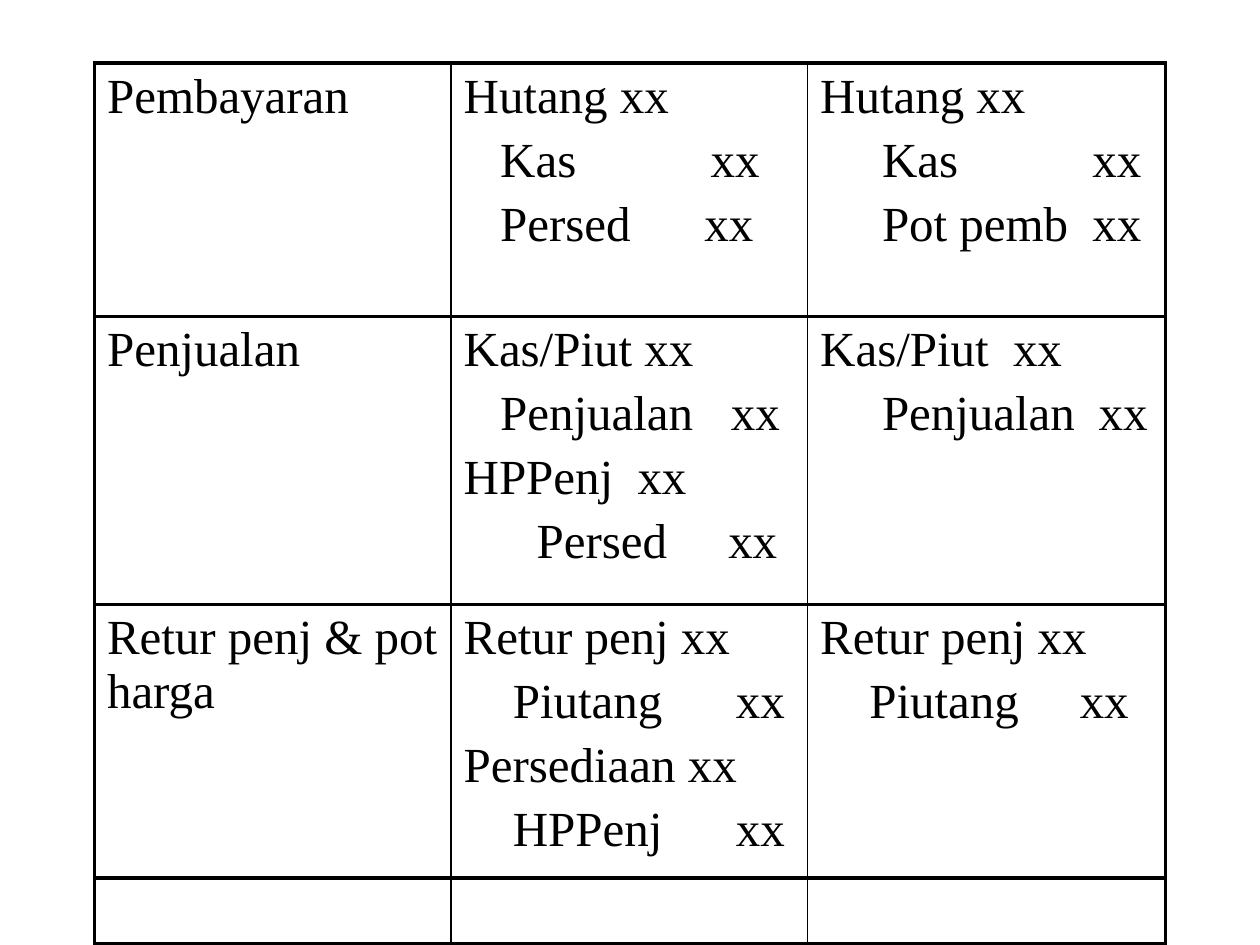
import pptx
import pptx.dml.color
import pptx.oxml
import pptx.oxml.ns
import pptx.util
from pptx.util import Inches

COLUMN_WIDTHS = [2.83, 2.83, 2.84]
ROW_HEIGHTS = [2.01, 2.29, 2.17, 0.52]
JOURNAL = [
    [
        [("Pembayaran",)],
        [("Hutang xx",), ("\tKas\txx", 0.29, 1.96), ("\tPersed\txx", 0.29, 1.91)],
        [("Hutang xx",), ("\tKas\txx", 0.49, 2.16), ("\tPot pemb\txx", 0.49, 2.16)],
    ],
    [
        [("Penjualan",)],
        [("Kas/Piut xx",), ("\tPenjualan\txx", 0.29, 2.12),
         ("HPPenj\txx", 1.38), ("\tPersed\txx", 0.58, 2.1)],
        [("Kas/Piut\txx", 1.53), ("\tPenjualan\txx", 0.49, 2.21)],
    ],
    [
        [("Retur penj & pot harga",)],
        [("Retur penj xx",), ("\tPiutang\txx", 0.39, 2.16),
         ("Persediaan xx",), ("\tHPPenj\txx", 0.39, 2.16)],
        [("Retur penj xx",), ("\tPiutang\txx", 0.39, 2.06)],
    ],
    [[], [], []],
]


def rgb(hex_string):
    return pptx.dml.color.RGBColor.from_string(hex_string)


class JournalSlide:
    """Holds the style and the current slide, and draws its elements."""

    font_name = "Times New Roman"
    font_size = 28
    ink = "000000"
    thick, thin = 2.25, 1

    def __init__(self, presentation):
        self.slide = presentation.slides.add_slide(presentation.slide_layouts[6])

    def add_entry(self, paragraph, text, *stops):
        paragraph.text = text
        paragraph.space_before = pptx.util.Pt(self.font_size * 0.2)
        paragraph.font.name = self.font_name
        paragraph.font.size = pptx.util.Pt(self.font_size)
        paragraph.font.color.rgb = rgb(self.ink)
        if stops:
            tabs = "".join(f'<a:tab pos="{Inches(stop)}" algn="l"/>' for stop in stops)
            tab_list = pptx.oxml.parse_xml(
                f'<a:tabLst {pptx.oxml.ns.nsdecls("a")}>{tabs}</a:tabLst>')
            properties = paragraph._p.get_or_add_pPr()
            properties.find(pptx.oxml.ns.qn("a:defRPr")).addprevious(tab_list)

    def set_borders(self, cell, left, right):
        widths = {"L": left, "R": right, "T": self.thick, "B": self.thick}
        properties = cell._tc.get_or_add_tcPr()
        for position, (side, width) in enumerate(widths.items()):
            properties.insert(position, pptx.oxml.parse_xml(
                f'<a:ln{side} {pptx.oxml.ns.nsdecls("a")} w="{pptx.util.Pt(width)}">'
                f'<a:solidFill><a:srgbClr val="{self.ink}"/></a:solidFill></a:ln{side}>'))

    def add_table(self, left, top, widths, heights, rows):
        table = self.slide.shapes.add_table(
            len(heights), len(widths), Inches(left), Inches(top),
            Inches(sum(widths)), Inches(sum(heights))).table
        table.first_row = table.horz_banding = False
        for column, width in zip(table.columns, widths):
            column.width = Inches(width)
        last = len(widths) - 1
        for r, (height, entries_by_column) in enumerate(zip(heights, rows)):
            table.rows[r].height = Inches(height)
            for c, entries in enumerate(entries_by_column):
                cell = table.cell(r, c)
                cell.fill.background()
                self.set_borders(cell, self.thick if c == 0 else self.thin,
                                 self.thick if c == last else self.thin)
                for number, entry in enumerate(entries):
                    frame = cell.text_frame
                    paragraph = frame.add_paragraph() if number else frame.paragraphs[0]
                    self.add_entry(paragraph, *entry)


def main():
    presentation = pptx.Presentation()
    presentation.slide_width = Inches(10)
    presentation.slide_height = Inches(7.5)
    journal = JournalSlide(presentation)
    journal.add_table(0.75, 0.5, COLUMN_WIDTHS, ROW_HEIGHTS, JOURNAL)
    presentation.save("out.pptx")


if __name__ == "__main__":
    main()
